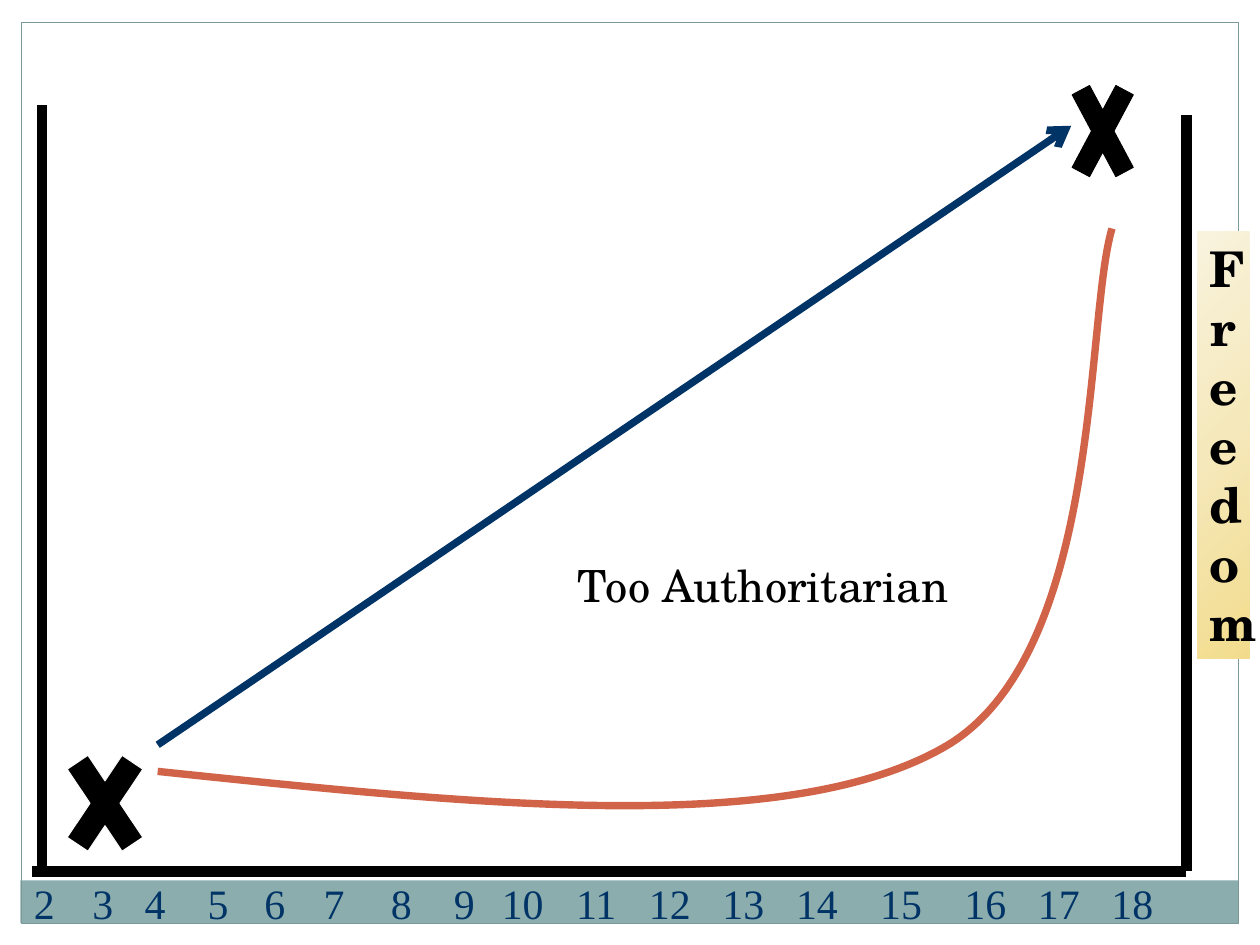
from lxml import etree
from pptx import Presentation
from pptx.dml.color import RGBColor
from pptx.enum.shapes import MSO_CONNECTOR, MSO_SHAPE
from pptx.enum.text import MSO_ANCHOR, MSO_AUTO_SIZE, PP_ALIGN
from pptx.oxml import parse_xml
from pptx.oxml.ns import nsdecls, qn
from pptx.util import Inches, Pt

RECTANGLE, CROSS = MSO_SHAPE.RECTANGLE, MSO_SHAPE.MATH_MULTIPLY
STRAIGHT = MSO_CONNECTOR.STRAIGHT
CENTER, MIDDLE = PP_ALIGN.CENTER, MSO_ANCHOR.MIDDLE
FIT_SHAPE = MSO_AUTO_SIZE.SHAPE_TO_FIT_TEXT

# Content: lengths in inches
COLORS = {"black": "000000", "white": "FFFFFF", "navy": "003366", "band": "8CADAE",
          "frame": "7C999A", "curve": "D16349"}
GOLD_STOPS = [(0, "F2DC8C"), (50, "F5E8BA"), (100, "F9F3DE")]
SERIF, SCHOLA = "Times New Roman", "TeX Gyre Schola"

AGE_CENTERS = {2: 0.5, 3: 1.16, 4: 1.75, 5: 2.46, 6: 3.1, 7: 3.77, 8: 4.53, 9: 5.24,
               10: 5.9, 11: 6.73, 12: 7.56, 13: 8.39, 14: 9.22, 15: 10.17, 16: 11.12,
               17: 11.95, 18: 12.78}
BASELINE = 9.84
AXES = [((0.47, 1.19), (0.47, BASELINE)),
        ((13.39, 1.3), (13.39, BASELINE)),
        ((0.36, BASELINE), (13.39, BASELINE))]
FREEDOM_ARROW = ((1.78, 8.41), (12.09, 1.42))
CROSSES = [((11.97, 0.59, 0.95, 1.78), "black"), ((0.59, 8.18, 1.19, 1.78), "white")]
# Start point, then two handles and an end point for each curve section
CURVE = [(1.78, 8.71), (5.32, 9.08), (8.86, 9.46), (10.65, 8.44),
         (12.45, 7.42), (12.24, 3.63), (12.55, 2.58)]

deck = Presentation()
deck.slide_width, deck.slide_height = Inches(14.22), Inches(10.67)
page = deck.slides.add_slide(deck.slide_layouts[6])


def color(name):
    return RGBColor.from_string(COLORS[name])


def add_box(preset, place, fill=None, line=None):
    box = page.shapes.add_shape(preset, *map(Inches, place))
    box.shadow.inherit = False
    if fill:
        box.fill.solid()
        box.fill.fore_color.rgb = color(fill)
    else:
        box.fill.background()
    if line:
        box.line.color.rgb = color(line)
        box.line.width = Pt(0.75)
    else:
        box.line.fill.background()
    return box


def add_line(start, end, line, width):
    connector = page.shapes.add_connector(STRAIGHT, *map(Inches, start + end))
    connector.line.color.rgb = color(line)
    connector.line.width = Pt(width)
    etree.SubElement(connector._element.spPr, qn("a:effectLst"))
    return connector


def write(box, text, size, font, ink, insets=(0.14, 0.07), wrap=True, bold=False):
    frame = box.text_frame
    frame.word_wrap = wrap
    frame.auto_size = FIT_SHAPE
    frame.margin_left = frame.margin_right = Inches(insets[0])
    frame.margin_top = frame.margin_bottom = Inches(insets[1])
    para = frame.paragraphs[0]
    para.text = text
    para.alignment = CENTER
    para.font.size, para.font.name, para.font.bold = Pt(size), font, bold
    para.font.color.rgb = color(ink)
    return frame


# Age band and slide frame
add_box(RECTANGLE, (0.23, 9.94, 13.74, 0.48), fill="band")
add_box(RECTANGLE, (0.24, 0.25, 13.74, 10.18), line="frame")

# Axes
for start, end in AXES:
    add_line(start, end, "black", 8.25)

# Ages along the band
for age, center in AGE_CENTERS.items():
    width = 0.52 if age < 10 else 0.76
    label = page.shapes.add_textbox(*map(Inches, (center - width / 2, BASELINE, width, 0.71)))
    write(label, str(age), 34, SERIF, "navy", wrap=False).vertical_anchor = MIDDLE

# Crosses and the straight path between them
for place, outline in CROSSES:
    add_box(CROSS, place, "black", outline)
arrow = add_line(*FREEDOM_ARROW, "navy", 6)
etree.SubElement(arrow.line._get_or_add_ln(), qn("a:tailEnd"), type="arrow")

# Freedom label: the narrow box stacks the letters
freedom = add_box(RECTANGLE, (13.51, 2.61, 0.59, 4.83))
write(freedom, "Freedom", 40, SCHOLA, "black", bold=True)
stops = "".join(f'<a:gs pos="{pos * 1000}"><a:srgbClr val="{tint}"/></a:gs>'
                for pos, tint in GOLD_STOPS)
gradient = parse_xml(
    f'<a:gradFill {nsdecls("a")} rotWithShape="1"><a:gsLst>{stops}</a:gsLst>'
    '<a:path path="circle"><a:fillToRect l="100000" t="100000"/></a:path></a:gradFill>')
properties = freedom._element.spPr
properties.replace(properties.find(qn("a:noFill")), gradient)

# Curve caption
caption = page.shapes.add_textbox(*map(Inches, (6.36, 6.25, 4.5, 0.71)))
write(caption, "Too Authoritarian", 36, SCHOLA, "black", insets=(0.1, 0.05))

# Authoritarian curve: every three vertices become one Bezier section
points = [(Inches(x), Inches(y)) for x, y in CURVE]
builder = page.shapes.build_freeform(*points[0])
builder.add_line_segments(points[1:], close=False)
curve = builder.convert_to_shape()
curve.shadow.inherit = False
curve.fill.background()
curve.line.color.rgb = color("curve")
curve.line.width = Pt(6)
outline = curve._element.spPr.find(".//" + qn("a:path"))
segments = outline.findall(qn("a:lnTo"))
for first in range(0, len(segments), 3):
    section = etree.SubElement(outline, qn("a:cubicBezTo"))
    for segment in segments[first:first + 3]:
        section.append(segment[0])
        outline.remove(segment)

deck.save("out.pptx")
